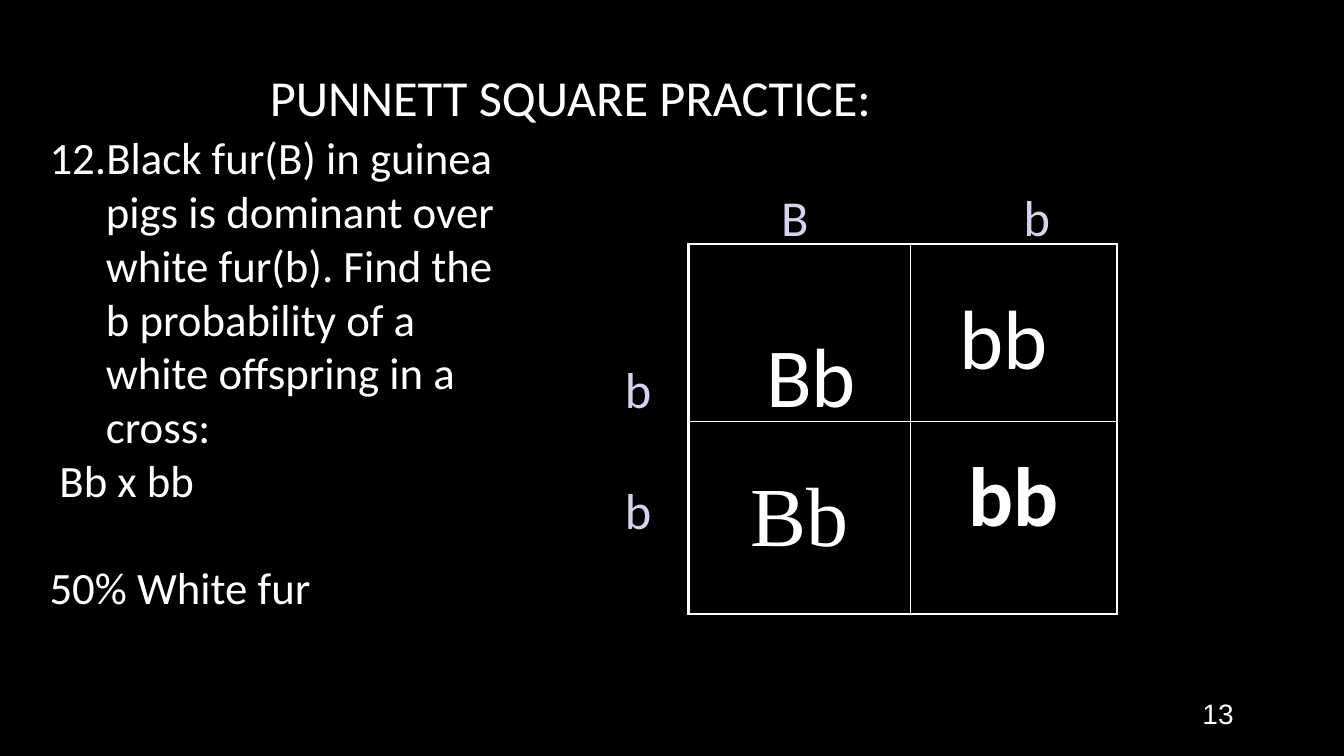
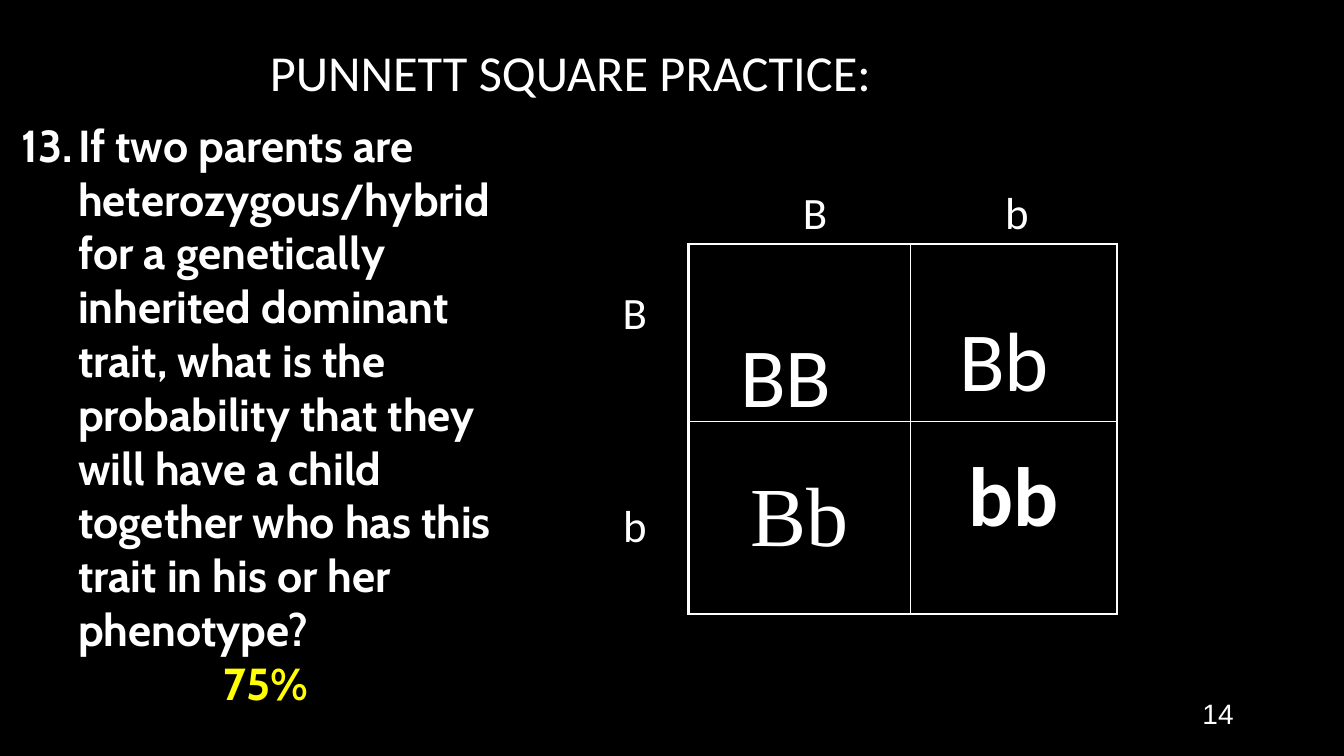
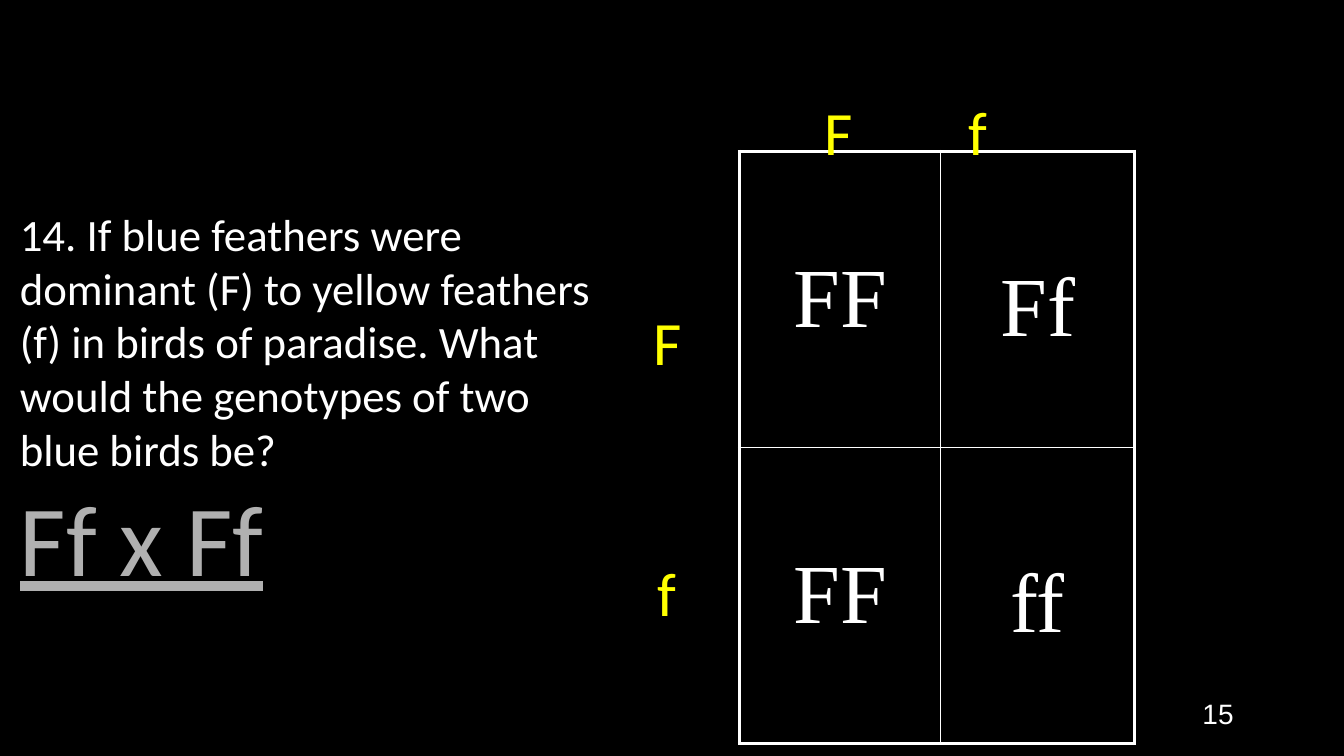
from lxml.etree import SubElement
from pptx import Presentation
from pptx.dml.color import RGBColor
from pptx.enum.text import MSO_ANCHOR as Anchor, PP_ALIGN as Align
from pptx.oxml.ns import qn
from pptx.util import Cm, Pt

BLACK, WHITE, LILAC, YELLOW, GREY = "000000", "FFFFFF", "D8D1ED", "FFFF00", "B0B0B0"
SANS, SERIF, ROUNDED, PLAIN = "Calibri", "Times New Roman", "Cabin", "Arial"
THICK, THIN = 2.25, 1
BODY_SIZE, GENOTYPE_SIZE = 32, 60
TITLE = "PUNNETT SQUARE PRACTICE:"


def paint(color_format, color):
    color_format.rgb = RGBColor.from_string(color)


def write(frame, text, *, size=BODY_SIZE, font=SANS, color=WHITE, bold=False,
          underline=False, align=Align.LEFT, before=0, indent=0, number=None):
    paragraph = frame.paragraphs[0]
    if paragraph.runs:
        paragraph = frame.add_paragraph()
    paragraph.alignment = align
    paragraph.space_before = Pt(before)
    run = paragraph.add_run()
    run.text = text
    run.font.size = Pt(size)
    run.font.name = font
    run.font.bold = bold
    run.font.underline = underline
    paint(run.font.color, color)
    properties = paragraph._p.get_or_add_pPr()
    properties.set("marL", str(Cm(indent)))
    if number:
        properties.set("indent", str(-Cm(indent)))
        SubElement(properties, qn("a:buAutoNum"), type="arabicPeriod", startAt=str(number))


def add_frame(slide, left, top, width, height, anchor=Anchor.TOP):
    frame = slide.shapes.add_textbox(Cm(left), Cm(top), Cm(width), Cm(height)).text_frame
    frame.word_wrap = True
    frame.vertical_anchor = anchor
    return frame


def add_title(slide, height):
    write(add_frame(slide, 6.55, 0.84, 21.59, height, Anchor.MIDDLE), TITLE, size=36)


def add_page_number(slide, number):
    frame = add_frame(slide, 24.28, 17.35, 7.06, 1.27, Anchor.MIDDLE)
    write(frame, str(number), size=20, font=PLAIN, align=Align.RIGHT)


def add_label(slide, text, center_x, center_y, size, color=WHITE):
    width, height = 3.2, 2.8
    frame = add_frame(slide, center_x - width / 2, center_y - height / 2,
                      width, height, Anchor.MIDDLE)
    write(frame, text, size=size, color=color, align=Align.CENTER)


def add_alleles(slide, columns, column_y, rows, row_x, size, color):
    for allele, x in columns:
        add_label(slide, allele, x, column_y, size, color)
    for allele, y in rows:
        add_label(slide, allele, row_x, y, size, color)


def set_borders(cell, row, column):
    edges = {"L": column == 0, "R": column == 1, "T": row == 0, "B": row == 1}
    for side, outer in edges.items():
        line = SubElement(cell._tc.get_or_add_tcPr(), qn(f"a:ln{side}"),
                          w=str(Pt(THICK if outer else THIN)))
        fill = SubElement(line, qn("a:solidFill"))
        SubElement(fill, qn("a:srgbClr"), val=WHITE)


def add_square(slide, left, top, widths, heights):
    table = slide.shapes.add_table(2, 2, Cm(left), Cm(top),
                                   Cm(sum(widths)), Cm(sum(heights))).table
    table.first_row = table.horz_banding = False
    for index in range(2):
        table.columns[index].width = Cm(widths[index])
        table.rows[index].height = Cm(heights[index])
        for column in range(2):
            cell = table.cell(index, column)
            set_borders(cell, index, column)
            cell.fill.background()
            cell.vertical_anchor = Anchor.MIDDLE
            cell.margin_left = cell.margin_right = cell.margin_top = cell.margin_bottom = 0
    return table


def write_genotype(cell, text, font=SERIF, bold=False):
    write(cell.text_frame, text, size=GENOTYPE_SIZE, font=font, bold=bold, align=Align.CENTER)


def add_practice_square(slide, top_genotypes):
    table = add_square(slide, 17.35, 6.15, (5.59, 5.21), (4.47, 4.85))
    write_genotype(table.cell(1, 0), "Bb")
    recessive = table.cell(1, 1)
    write_genotype(recessive, "bb", SANS, bold=True)
    recessive.margin_bottom = Cm(1)
    for genotype, x, y in top_genotypes:
        add_label(slide, genotype, x, y, GENOTYPE_SIZE)


def build_guinea_pigs(slide):
    add_title(slide, 3.17)
    add_practice_square(slide, [("Bb", 20.44, 9.42), ("bb", 25.3, 8.47)])
    question = add_frame(slide, 1, 3.15, 12.3, 14.7)
    write(question, "Black fur(B) in guinea pigs is dominant over white fur(b). "
          "Find the b probability of a white offspring in a cross:", indent=1.42, number=12)
    write(question, "Bb x bb", indent=0.25)
    write(question, "50% White fur", before=38)
    add_alleles(slide, [("B", 20.03), ("b", 26.13)], 5.44,
                [("b", 9.78), ("b", 12.83)], 16.08, 36, LILAC)


def build_hybrid_parents(slide):
    add_title(slide, 1.9)
    add_practice_square(slide, [("BB", 19.81, 9.42), ("Bb", 25.3, 9.02)])
    question = add_frame(slide, 0.3, 2.84, 13.2, 15.5)
    write(question, "If two parents are heterozygous/hybrid for a genetically inherited "
          "dominant trait, what is the probability that they will have a child together "
          "who has this trait in his or her phenotype?",
          font=ROUNDED, bold=True, indent=1.42, number=13)
    write(question, "75%", font=ROUNDED, bold=True, color=YELLOW, indent=5.08)
    add_alleles(slide, [("B", 20.54), ("b", 25.63)], 5.34,
                [("B", 7.84), ("b", 13.23)], 16, 32, WHITE)


def build_birds(slide):
    table = add_square(slide, 18.63, 3.81, (5.08, 4.88), (7.46, 7.46))
    for row, genotypes in enumerate([("FF", "Ff"), ("FF", "ff")]):
        for column, genotype in enumerate(genotypes):
            write_genotype(table.cell(row, column), genotype)
        table.cell(row, 1).margin_top = Cm(0.46)
    question = add_frame(slide, 0.25, 5.08, 15.62, 10.2)
    write(question, "14. If blue feathers were dominant (F) to yellow feathers (f) in birds "
          "of paradise. What would the genotypes of two blue birds be?")
    write(question, "Ff x Ff", size=72, color=GREY, underline=True)
    add_alleles(slide, [("F", 21.14), ("f", 24.65)], 3.3,
                [("F", 8.59), ("f", 14.92)], 16.82, 44, YELLOW)


def main():
    deck = Presentation()
    deck.slide_width, deck.slide_height = Cm(33.87), Cm(19.05)
    backdrop = deck.slide_master.background.fill
    backdrop.solid()
    paint(backdrop.fore_color, BLACK)
    builders = (build_guinea_pigs, build_hybrid_parents, build_birds)
    for number, build in enumerate(builders, start=13):
        slide = deck.slides.add_slide(deck.slide_layouts[6])
        build(slide)
        add_page_number(slide, number)
    deck.save("out.pptx")


if __name__ == "__main__":
    main()
